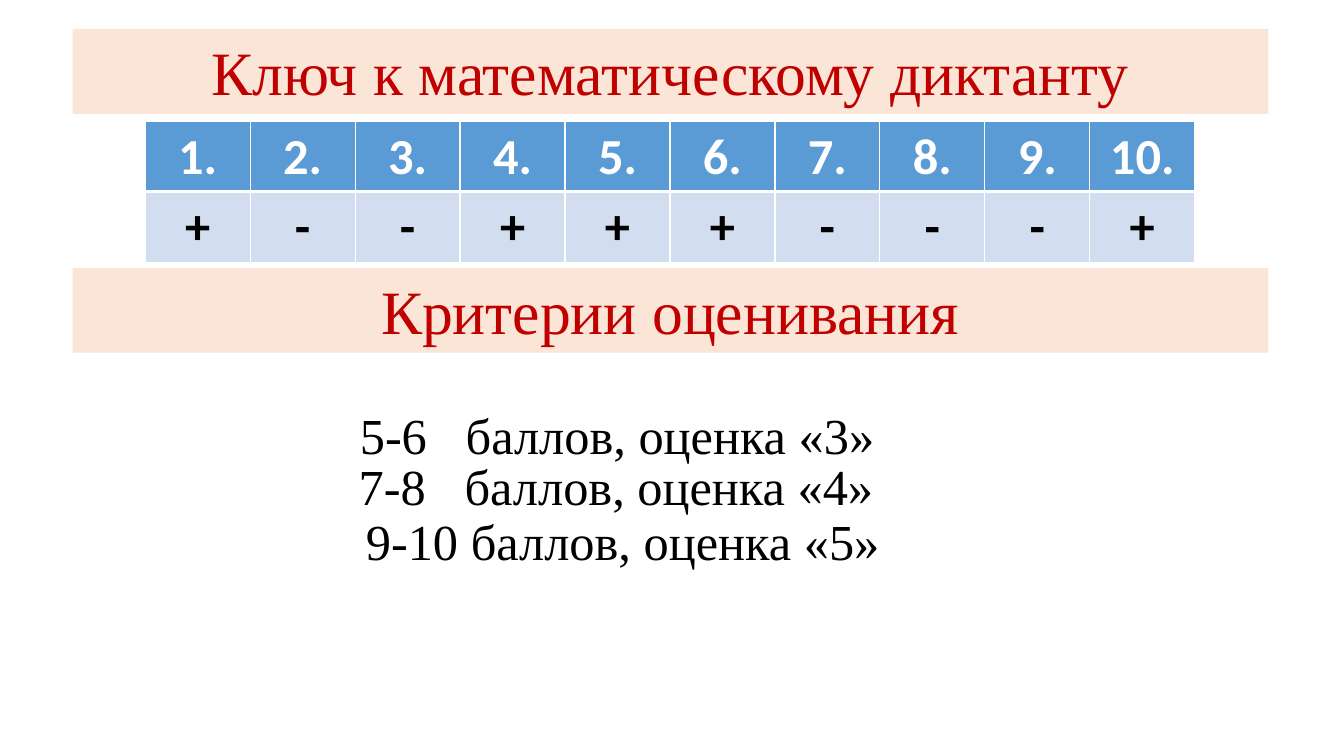
from lxml.etree import SubElement as Sub
from pptx import Presentation
from pptx.dml.color import RGBColor
from pptx.enum.shapes import MSO_SHAPE as Shape
from pptx.enum.text import MSO_ANCHOR as Anchor, PP_ALIGN as Align
from pptx.oxml.ns import qn
from pptx.util import Inches, Pt

SERIF, SANS = "Times New Roman", "Calibri"
BANNERS = [("Ключ к математическому диктанту", 0.29),
           ("Критерии оценивания", 2.66)]
GRADES = [("9-10 баллов, оценка «5»", 3.53, 5.01, 5.75),
          ("7-8\tбаллов, оценка «4»", 3.46, 4.47, 6.37),
          ("5-6\tбаллов, оценка «3»", 3.47, 3.96, 6.68)]
KEY = "+--+++---+"
ROWS = [([f"{n}." for n in range(1, len(KEY) + 1)], "5B9BD5", "FFFFFF"),
        (list(KEY), "D2DEEF", "000000")]
COL, ROW = 1.041, 0.7


def paint(item, color):
    item.fill.solid()
    item.fill.fore_color.rgb = RGBColor.from_string(color)


def style(frame, size, face, color, align=Align.LEFT, bold=False):
    for para in frame.paragraphs:
        para.alignment = align
        for run in para.runs:
            font = run.font
            font.size, font.name, font.bold = Pt(size), face, bold
            font.color.rgb = RGBColor.from_string(color)


def border(cell, side, width):
    line = Sub(cell._tc.get_or_add_tcPr(), qn(f"a:ln{side}"), w=str(Pt(width)))
    Sub(Sub(line, qn("a:solidFill")), qn("a:srgbClr"), val="FFFFFF")


def add_banner(slide, text, top):
    box = slide.shapes.add_shape(Shape.RECTANGLE, Inches(0.72), Inches(top),
                                 Inches(11.86), Inches(0.84))
    box.shadow.inherit = False
    box.line.fill.background()
    paint(box, "FBE5D6")
    frame = box.text_frame
    frame.text = text
    frame.word_wrap = True
    frame.vertical_anchor = Anchor.TOP
    style(frame, 44, SERIF, "C00000", Align.CENTER)


def add_grade(slide, text, left, top, width):
    box = slide.shapes.add_textbox(Inches(left), Inches(top),
                                   Inches(width), Inches(0.71))
    frame = box.text_frame
    frame.text = text
    frame.word_wrap = True
    if "\t" in text:
        tabs = Sub(frame.paragraphs[0]._p.get_or_add_pPr(), qn("a:tabLst"))
        Sub(tabs, qn("a:tab"), pos=str(Inches(1.05)), algn="l")
    style(frame, 36, SERIF, "000000")


def add_key(slide):
    count = len(KEY)
    table = slide.shapes.add_table(len(ROWS), count, Inches(1.44), Inches(1.2),
                                   Inches(COL * count),
                                   Inches(ROW * len(ROWS))).table
    for r, (marks, fill, color) in enumerate(ROWS):
        for c, mark in enumerate(marks):
            cell = table.cell(r, c)
            cell.text = mark
            for side in "LRTB":
                joint = (r, side) in [(0, "B"), (1, "T")]
                border(cell, side, 3 if joint else 1)
            paint(cell, fill)
            style(cell.text_frame, 36, SANS, color, Align.CENTER, True)


def main():
    """Build the dictation key slide."""
    deck = Presentation()
    deck.slide_width, deck.slide_height = Inches(13.33), Inches(7.5)
    slide = deck.slides.add_slide(deck.slide_layouts[6])
    for banner in BANNERS:
        add_banner(slide, *banner)
    for grade in GRADES:
        add_grade(slide, *grade)
    add_key(slide)
    deck.save("out.pptx")


if __name__ == "__main__":
    main()
